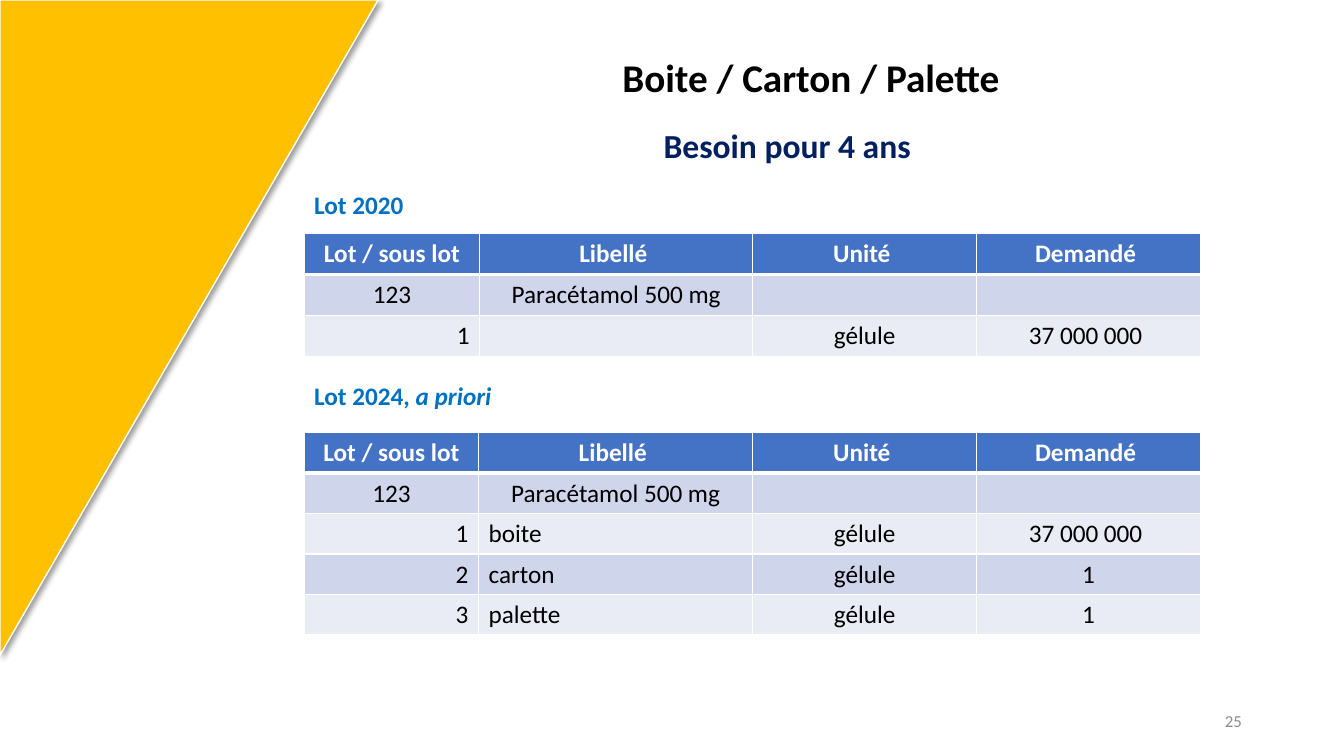
from lxml.etree import SubElement
from pptx import Presentation
from pptx.dml.color import RGBColor
from pptx.enum.shapes import MSO_SHAPE
from pptx.enum.text import MSO_ANCHOR, MSO_AUTO_SIZE, PP_ALIGN
from pptx.oxml.ns import qn
from pptx.util import Cm, Pt

LEFT, CENTER, RIGHT = PP_ALIGN.LEFT, PP_ALIGN.CENTER, PP_ALIGN.RIGHT
FONT = "Calibri"
WHITE, BLACK, GREY = "FFFFFF", "000000", "8C8C8C"
YELLOW, NAVY, BLUE = "FFC000", "002060", "0070C0"
HEADER_FILL, BAND_FILLS = "4472C4", ("E9EBF5", "CFD5EA")

TITLE = "Boite / Carton / Palette"
SUBTITLE = "Besoin pour 4 ans"
PAGE_NUMBER = "25"
HEADERS = ("Lot / sous lot", "Libellé ", "Unité ", "Demandé ")
PRODUCT = ("123", "Paracétamol 500 mg", "", "")
TABLE_LEFT = 7.67

# Label parts (text, italic), label top and width, table top, row height, columns, rows
LOTS = [
    ([("Lot 2020", False)], 4.65, 6.76, 5.89, 1.03, (4.42, 6.88, 5.64, 5.64),
     [HEADERS, PRODUCT, ("1", "", "gélule", "37 000 000 ")]),
    ([("Lot 2024, ", False), ("a priori", True)], 9.47, 9.93, 10.9, 1.02,
     (4.39, 6.91, 5.64, 5.64),
     [HEADERS, PRODUCT,
      ("1", "boite", "gélule", "37 000 000 "),
      ("2", "carton", "gélule", "1"),
      ("3", "palette", "gélule", "1")]),
]


def color(value):
    return RGBColor.from_string(value)


def paint(fill, value):
    fill.solid()
    fill.fore_color.rgb = color(value)


def write(frame, parts, size=18, ink=BLACK, bold=False, align=LEFT, spacing=1.0):
    """Fill the first paragraph with (text, italic) parts, or with one string."""
    para = frame.paragraphs[0]
    para.alignment, para.line_spacing = align, spacing
    for text, italic in [(parts, False)] if isinstance(parts, str) else parts:
        span = para.add_run()
        span.text = text
        font = span.font
        font.name, font.size, font.bold, font.italic = FONT, Pt(size), bold, italic
        font.color.rgb = color(ink)


def add_text(page, parts, left, top, width, height, anchor=MSO_ANCHOR.TOP, **style):
    box = page.shapes.add_textbox(Cm(left), Cm(top), Cm(width), Cm(height))
    box.text_frame.word_wrap = True
    box.text_frame.vertical_anchor = anchor
    write(box.text_frame, parts, **style)


def add_corner(page, width, height):
    """Draw the top-left triangle: a right triangle turned a quarter turn."""
    corner = page.shapes.add_shape(
        MSO_SHAPE.RIGHT_TRIANGLE, Cm((width - height) / 2), Cm((height - width) / 2),
        Cm(height), Cm(width))
    corner.rotation = 90
    paint(corner.fill, YELLOW)
    corner.line.color.rgb = color(WHITE)
    corner.line.width = Pt(1)
    corner.shadow.inherit = False
    effects = corner._element.spPr.find(qn("a:effectLst"))
    shadow = SubElement(effects, qn("a:outerShdw"), blurRad=str(Pt(4)),
                        dist=str(Pt(3)), dir="2700000", algn="tl", rotWithShape="0")
    shade = SubElement(shadow, qn("a:srgbClr"), val=BLACK)
    SubElement(shade, qn("a:alpha"), val="40000")


def set_borders(cell, **widths):
    properties = cell._tc.get_or_add_tcPr()
    for index, side in enumerate("LRTB"):
        line = properties.makeelement(
            qn("a:ln" + side), {"w": str(Pt(widths.get(side, 1)))})
        SubElement(SubElement(line, qn("a:solidFill")), qn("a:srgbClr"), val=WHITE)
        properties.insert(index, line)


def add_lot_table(page, top, row_height, columns, rows):
    table = page.shapes.add_table(
        len(rows), len(columns), Cm(TABLE_LEFT), Cm(top),
        Cm(sum(columns)), Cm(row_height * len(rows))).table
    for column, width in zip(table.columns, columns):
        column.width = Cm(width)
    for r, texts in enumerate(rows):
        table.rows[r].height = Cm(row_height)
        header = r == 0
        aligns = (CENTER,) * 4 if r < 2 else (RIGHT, LEFT, CENTER, CENTER)
        for c, (text, align) in enumerate(zip(texts, aligns)):
            cell = table.cell(r, c)
            paint(cell.fill, HEADER_FILL if header else BAND_FILLS[r % 2])
            set_borders(cell, T=3 if r == 1 else 1, B=3 if header else 1)
            if text:
                write(cell.text_frame, text, ink=WHITE if header else BLACK,
                      bold=header, align=align)


def main():
    deck = Presentation()
    deck.slide_width, deck.slide_height = Cm(33.87), Cm(19.05)
    page = deck.slides.add_slide(deck.slide_layouts[5])
    add_corner(page, 9.53, 16.51)

    title = page.shapes.title
    title.left, title.top, title.width, title.height = (
        Cm(8.23), Cm(1.32), Cm(24.41), Cm(1.35))
    title.text_frame.auto_size = MSO_AUTO_SIZE.NONE
    title.text_frame.vertical_anchor = MSO_ANCHOR.BOTTOM
    write(title.text_frame, TITLE, size=28, bold=True, align=CENTER, spacing=0.9)

    add_text(page, SUBTITLE, 8.69, 3.15, 22.3, 1.22, size=24, ink=NAVY, bold=True,
             align=CENTER, spacing=0.9)
    for label, label_top, label_width, *table in LOTS:
        add_text(page, label, TABLE_LEFT, label_top, label_width, 1.03,
                 ink=BLUE, bold=True)
        add_lot_table(page, *table)
    add_text(page, PAGE_NUMBER, 23.93, 17.65, 7.62, 1.02, MSO_ANCHOR.MIDDLE,
             size=12, ink=GREY, align=RIGHT)
    deck.save("out.pptx")


if __name__ == "__main__":
    main()
